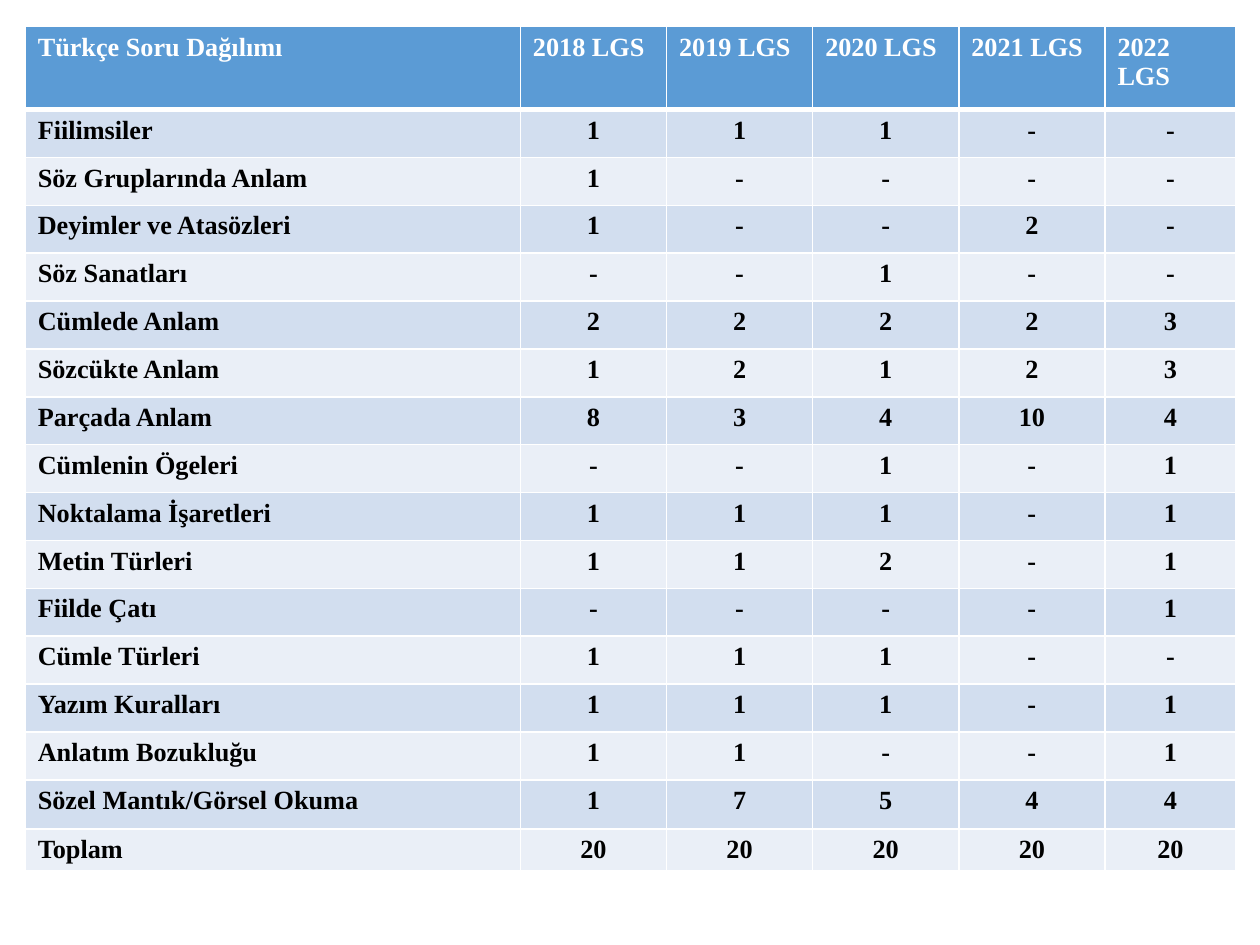
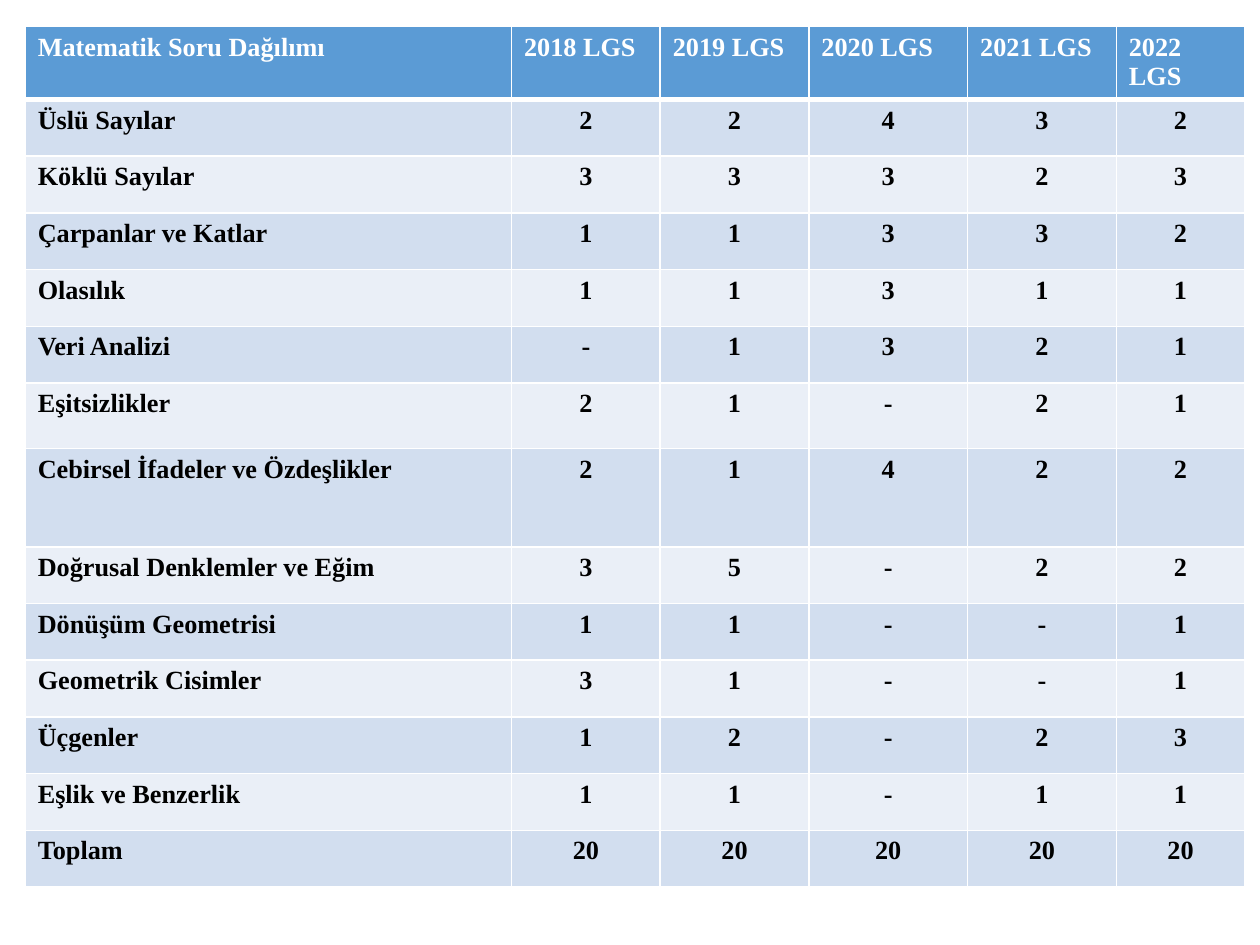
from lxml.etree import SubElement
from pptx import Presentation
from pptx.dml.color import RGBColor
from pptx.enum.text import PP_ALIGN
from pptx.oxml.ns import qn
from pptx.util import Inches, Pt

# Content: one row per topic, one value per exam year
EXAMS = ["2018 LGS", "2019 LGS", "2020 LGS", "2021 LGS", "2022 LGS"]

TURKISH = [
    ("Fiilimsiler", "1 1 1 - -"),
    ("Söz Gruplarında Anlam", "1 - - - -"),
    ("Deyimler ve Atasözleri", "1 - - 2 -"),
    ("Söz Sanatları", "- - 1 - -"),
    ("Cümlede Anlam", "2 2 2 2 3"),
    ("Sözcükte Anlam", "1 2 1 2 3"),
    ("Parçada Anlam", "8 3 4 10 4"),
    ("Cümlenin Ögeleri", "- - 1 - 1"),
    ("Noktalama İşaretleri", "1 1 1 - 1"),
    ("Metin Türleri", "1 1 2 - 1"),
    ("Fiilde Çatı", "- - - - 1"),
    ("Cümle Türleri", "1 1 1 - -"),
    ("Yazım Kuralları", "1 1 1 - 1"),
    ("Anlatım Bozukluğu", "1 1 - - 1"),
    ("Sözel Mantık/Görsel Okuma", "1 7 5 4 4"),
    ("Toplam", "20 20 20 20 20"),
]

MATHS = [
    ("Üslü Sayılar", "2 2 4 3 2"),
    ("Köklü Sayılar", "3 3 3 2 3"),
    ("Çarpanlar ve Katlar", "1 1 3 3 2"),
    ("Olasılık", "1 1 3 1 1"),
    ("Veri Analizi", "- 1 3 2 1"),
    ("Eşitsizlikler", "2 1 - 2 1"),
    ("Cebirsel İfadeler ve Özdeşlikler", "2 1 4 2 2"),
    ("Doğrusal Denklemler ve Eğim", "3 5 - 2 2"),
    ("Dönüşüm Geometrisi", "1 1 - - 1"),
    ("Geometrik Cisimler", "3 1 - - 1"),
    ("Üçgenler", "1 2 - 2 3"),
    ("Eşlik ve Benzerlik", "1 1 - 1 1"),
    ("Toplam", "20 20 20 20 20"),
]

# Row heights: the usual one, then the rows that differ (0 is the header)
TABLES = [
    {"title": "Türkçe Soru Dağılımı", "topics": TURKISH,
     "columns": [3.93, 1.16, 1.16, 1.16, 1.16, 1.04],
     "row": 0.38, "special_rows": {0: 0.66, 15: 0.39, 16: 0.32}},
    {"title": "Matematik Soru Dağılımı", "topics": MATHS,
     "columns": [3.86, 1.18, 1.18, 1.26, 1.18, 1.02],
     "row": 0.45, "special_rows": {0: 0.58, 6: 0.52, 7: 0.78}},
]

# Shared style
WHITE = RGBColor(0xFF, 0xFF, 0xFF)
BLACK = RGBColor(0x00, 0x00, 0x00)
HEADER_BLUE = RGBColor(0x5B, 0x9B, 0xD5)
BANDS = [RGBColor(0xEA, 0xEF, 0xF7), RGBColor(0xD2, 0xDE, 0xEF)]
FONT = "Times New Roman"
FONT_SIZE = Pt(15)
LEFT, TOP = 0.2, 0.21
THIN, THICK = Pt(1), Pt(3)


def set_borders(cell, row):
    """White grid with a thick rule between header and body."""
    widths = {"a:lnL": THIN, "a:lnR": THIN,
              "a:lnT": THICK if row == 1 else THIN,
              "a:lnB": THICK if row == 0 else THIN}
    properties = cell._tc.get_or_add_tcPr()
    for position, (tag, width) in enumerate(widths.items()):
        line = SubElement(properties, qn(tag), w=str(width))
        fill = SubElement(line, qn("a:solidFill"))
        SubElement(fill, qn("a:srgbClr"), val=str(WHITE))
        properties.insert(position, line)


def fill_cell(cell, text, row, column):
    cell.fill.solid()
    cell.fill.fore_color.rgb = BANDS[row % 2] if row else HEADER_BLUE
    set_borders(cell, row)
    para = cell.text_frame.paragraphs[0]
    if row and column:
        para.alignment = PP_ALIGN.CENTER
    elif row == column == 0:
        para.alignment = PP_ALIGN.JUSTIFY
    else:
        para.alignment = PP_ALIGN.LEFT
    span = para.add_run()
    span.text = text
    span.font.name = FONT
    span.font.size = FONT_SIZE
    span.font.bold = True
    span.font.color.rgb = BLACK if row else WHITE


def add_question_table(page, content):
    rows = [[content["title"], *EXAMS]]
    rows += [[topic, *counts.split()] for topic, counts in content["topics"]]
    widths = content["columns"]
    heights = [content["special_rows"].get(row, content["row"])
               for row in range(len(rows))]
    table = page.shapes.add_table(
        len(rows), len(widths), Inches(LEFT), Inches(TOP),
        Inches(sum(widths)), Inches(sum(heights))).table
    for column, width in zip(table.columns, widths):
        column.width = Inches(width)
    for row, height in zip(table.rows, heights):
        row.height = Inches(height)
    for row, texts in enumerate(rows):
        for column, text in enumerate(texts):
            fill_cell(table.cell(row, column), text, row, column)


def main():
    deck = Presentation()
    deck.slide_width, deck.slide_height = Inches(10), Inches(7.5)
    blank = deck.slide_layouts[6]
    for content in TABLES:
        add_question_table(deck.slides.add_slide(blank), content)
    deck.save("out.pptx")


if __name__ == "__main__":
    main()
